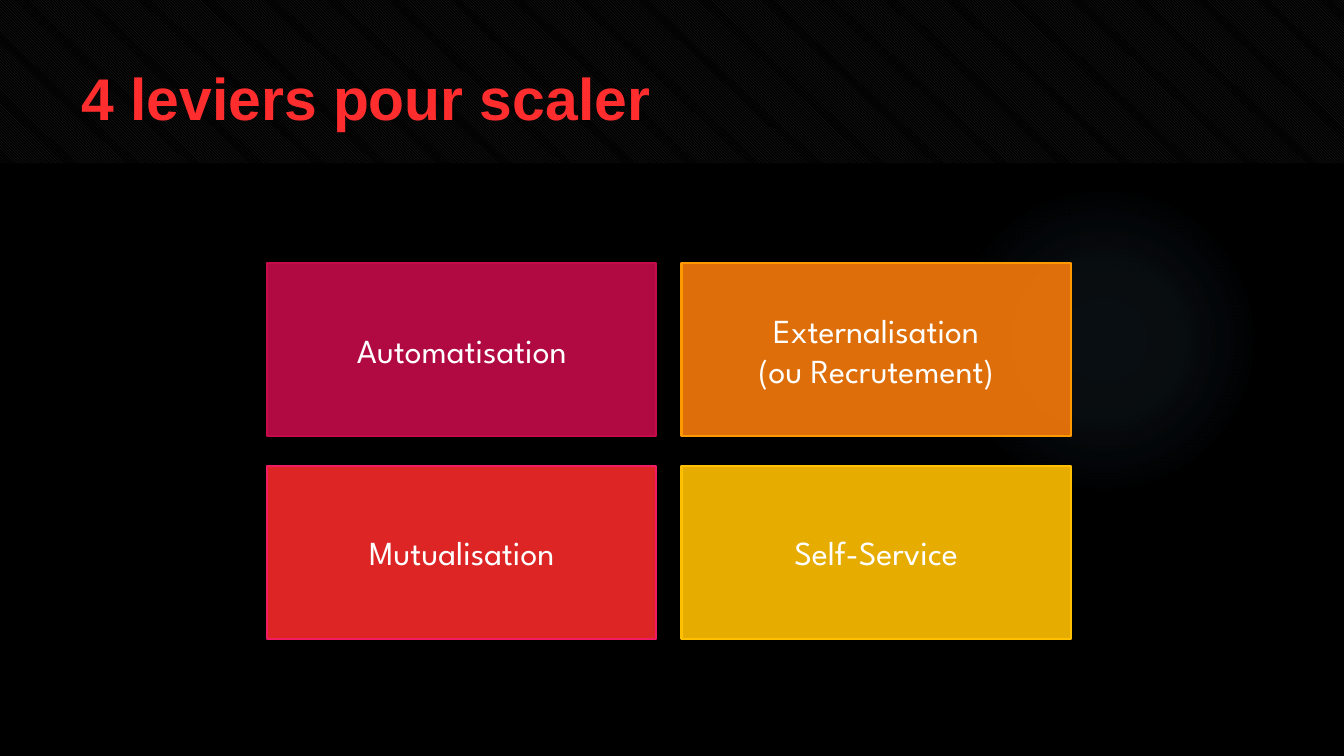
from lxml import etree
from pptx import Presentation
from pptx import util as u
from pptx.dml.color import RGBColor
from pptx.enum import dml, shapes, text
from pptx.oxml import parse_xml
from pptx.oxml.ns import nsdecls, qn

WIDTH, HEIGHT = 13.33, 7.5
GRID_LEFT, GRID_TOP = 2.65, 2.61
COLUMN_STEP, ROW_STEP = 4.11, 2.01
CARD_WIDTH, CARD_HEIGHT = 3.86, 1.72

# column, row, fill, outline, lines of text
LEVERS = [
    (1, 0, "F67A0A", "FF9900", ["Externalisation", "(ou Recrutement)"]),
    (0, 0, "C50B49", "C50B49", ["Automatisation"]),
    (0, 1, "F62A2A", "F21A62", ["Mutualisation"]),
    (1, 1, "FFC000", "FFC000", ["Self-Service"]),
]


def color(value):
    return RGBColor.from_string(value)


def add_shape(slide, kind, left, top, width, height):
    shape = slide.shapes.add_shape(
        kind, u.Inches(left), u.Inches(top), u.Inches(width), u.Inches(height))
    shape.shadow.inherit = False
    shape.line.fill.background()
    return shape


def add_run(paragraph, words, size, font, ink, bold=False):
    run = paragraph.add_run()
    run.text = words
    run.font.size, run.font.name, run.font.bold = u.Pt(size), font, bold
    run.font.color.rgb = color(ink)


def add_glow(slide):
    """A soft round light that fades out towards its edge."""
    glow = add_shape(slide, shapes.MSO_SHAPE.OVAL, 9.41, 1.83, 3.08, 3.08)
    stops = "".join(
        f'<a:gs pos="{position}000"><a:srgbClr val="7AC4F0">'
        f'<a:alpha val="{alpha}000"/></a:srgbClr></a:gs>'
        for position, alpha in [(0, 7), (36, 6), (69, 0), (100, 0)])
    gradient = parse_xml(
        f'<a:gradFill {nsdecls("a")}><a:gsLst>{stops}</a:gsLst><a:path path="circle">'
        '<a:fillToRect l="50000" t="50000" r="50000" b="50000"/></a:path></a:gradFill>')
    glow._element.spPr.find(qn("a:prstGeom")).addnext(gradient)


def add_header_band(slide):
    band = add_shape(slide, shapes.MSO_SHAPE.RECTANGLE, 0, 0, WIDTH, 1.62)
    band.fill.patterned()
    band.fill.pattern = dml.MSO_PATTERN.DARK_DOWNWARD_DIAGONAL
    band.fill.fore_color.rgb = color("262626")
    band.fill.back_color.rgb = color("000000")


def add_title(slide, words):
    box = slide.shapes.add_textbox(
        u.Inches(0.71), u.Inches(0.5), u.Inches(11.91), u.Inches(1.53))
    frame = box.text_frame
    frame.word_wrap = True
    frame.margin_top = u.Inches(0.11)
    add_run(frame.paragraphs[0], words, 42, "Arial", "FF2D2D", bold=True)


def add_card(slide, column, row, fill, outline, lines):
    card = add_shape(slide, shapes.MSO_SHAPE.RECTANGLE,
                     GRID_LEFT + column * COLUMN_STEP, GRID_TOP + row * ROW_STEP,
                     CARD_WIDTH, CARD_HEIGHT)
    card.fill.solid()
    card.fill.fore_color.rgb = color(fill)
    solid = card._element.spPr.find(qn("a:solidFill"))
    etree.SubElement(solid[0], qn("a:alpha"), val="90000")
    card.line.color.rgb = color(outline)
    card.line.width = u.Pt(1.5)

    frame = card.text_frame
    frame.word_wrap = True
    frame.vertical_anchor = text.MSO_ANCHOR.MIDDLE
    paragraph = frame.paragraphs[0]
    paragraph.alignment = text.PP_ALIGN.CENTER
    for index, line in enumerate(lines):
        if index:
            paragraph.add_line_break()
        add_run(paragraph, line, 24, "League Spartan", "FFFFFF")


def main():
    presentation = Presentation()
    presentation.slide_width = u.Inches(WIDTH)
    presentation.slide_height = u.Inches(HEIGHT)
    slide = presentation.slides.add_slide(presentation.slide_layouts[6])

    # Backdrop
    slide.background.fill.solid()
    slide.background.fill.fore_color.rgb = color("000000")
    add_glow(slide)
    add_header_band(slide)

    # Content
    add_title(slide, "4 leviers pour scaler")
    for lever in LEVERS:
        add_card(slide, *lever)

    presentation.save("out.pptx")


if __name__ == "__main__":
    main()
